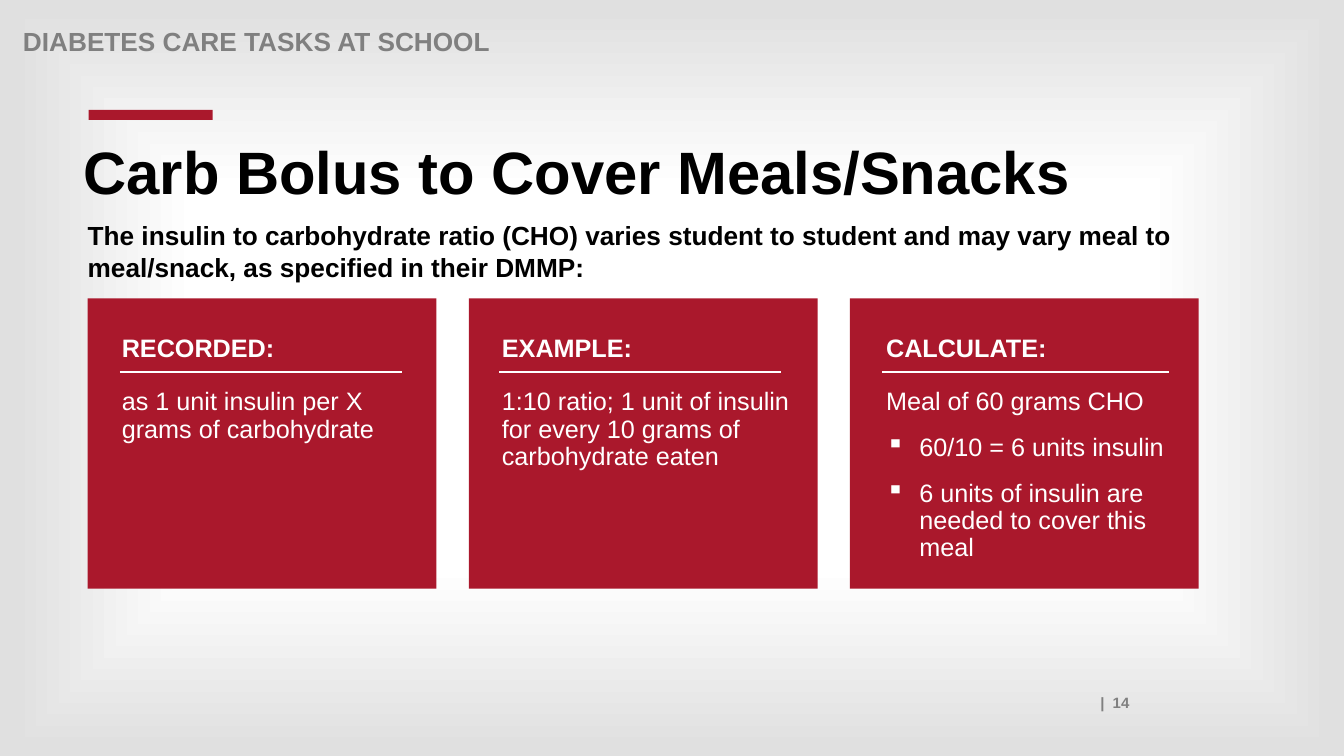
import pptx
import pptx.util
import pptx.dml.color
import pptx.enum.shapes
import pptx.enum.text
import pptx.oxml
import pptx.oxml.ns
import lxml.etree

inch = pptx.util.Inches
point = pptx.util.Pt
RED, WHITE, GREY, BLACK = "AA182C", "FFFFFF", "808080", "000000"


def paint(color, code):
    color.rgb = pptx.dml.color.RGBColor.from_string(code)


def write(box, lines, size, code, bold=False, tight=True, inset=True):
    """Add a text box; box is left, top, width, height in inches."""
    frame = slide.shapes.add_textbox(*map(inch, box)).text_frame
    frame.word_wrap = True
    if not inset:
        frame.margin_left = frame.margin_right = 0
        frame.margin_top = frame.margin_bottom = 0
    frame.text = "\n".join(lines)
    for para in frame.paragraphs:
        para.space_before = point(13.3)
        if tight:
            para.line_spacing = 0.9
        para.font.name = "Arial"
        para.font.size = point(size)
        para.font.bold = bold
        paint(para.font.color, code)
    return frame


deck = pptx.Presentation()
deck.slide_width, deck.slide_height = inch(13.33), inch(7.5)
slide = deck.slides.add_slide(deck.slide_layouts[6])

# Background: white centre fading to a grey edge
slide.background.fill.gradient()
grad = slide.element.find(".//" + pptx.oxml.ns.qn("a:gradFill"))
stops = "".join(
    f'<a:gs pos="{share * 1000}"><a:srgbClr val="{code}"/></a:gs>'
    for share, code in [(12, WHITE), (50, WHITE), (98, "E0E0E0")])
fade = pptx.oxml.parse_xml(
    f'<a:gradFill {pptx.oxml.ns.nsdecls("a")} rotWithShape="1"><a:gsLst>{stops}</a:gsLst>'
    '<a:path path="shape"><a:fillToRect l="50000" t="50000" r="50000" b="50000"/>'
    '</a:path></a:gradFill>')
grad.getparent().replace(grad, fade)

# Grid: three equal columns
left, pitch, wide = 0.87, 3.78, 3.46
top, tall = 2.96, 2.88
head, rule, body = 3.28, 3.69, 3.81

# Red bar and cards
bars = [(0.88, 1.09, 1.23, 0.1)]
bars += [(left + col * pitch, top, wide, tall) for col in range(3)]
for box in bars:
    rect = slide.shapes.add_shape(
        pptx.enum.shapes.MSO_SHAPE.RECTANGLE, *map(inch, box))
    rect.shadow.inherit = False
    rect.fill.solid()
    paint(rect.fill.fore_color, RED)
    rect.line.fill.background()

# Header, title, lead and page number
write((0.13, 0.24, 11, 0.28), ["DIABETES CARE TASKS AT SCHOOL"], 18.7, GREY, True)
write((0.73, 1.37, 11.03, 0.95), ["Carb Bolus to Cover Meals/Snacks"], 42.7, BLACK, True)
write((left, 2.18, 11.47, 0.63),
      ["The insulin to carbohydrate ratio (CHO) varies student to student "
       "and may vary meal to meal/snack, as specified in their DMMP:"],
      18.7, BLACK, True, tight=False, inset=False)
page = write((1.21, 6.83, 10.09, 0.28), ["|  14"], 10.7, GREY, True, tight=False)
page.paragraphs[0].alignment = pptx.enum.text.PP_ALIGN.RIGHT

# Card text: text left, rule start, rule end, heading, lines
cards = [
    (1.11, 1.19, 3.99, "RECORDED:",
     ["as 1 unit insulin per X grams of carbohydrate"]),
    (4.88, 4.95, 7.75, "EXAMPLE:",
     ["1:10 ratio; 1 unit of insulin for every 10 grams of carbohydrate eaten"]),
    (8.69, 8.75, 11.59, "CALCULATE:",
     ["Meal of 60 grams CHO", "60/10 = 6 units insulin",
      "6 units of insulin are needed to cover this meal"]),
]
for x, start, end, title, lines in cards:
    write((x, head, 2.66, 0.41), [title], 18, WHITE, True)
    text = write((x, body, 3.1 if len(lines) > 1 else 3.17, 0.92), lines, 18, WHITE)

    # Lines after the first are bullets
    for para in text.paragraphs[1:]:
        props = para._p.get_or_add_pPr()
        props.set("marL", str(inch(0.33)))
        props.set("indent", str(-inch(0.33)))
        mark = lxml.etree.SubElement(props, pptx.oxml.ns.qn("a:buChar"))
        mark.set("char", "▪")
        props.remove(mark)
        props.insert_element_before(mark, "a:tabLst", "a:defRPr", "a:extLst")

    line = slide.shapes.add_connector(
        pptx.enum.shapes.MSO_CONNECTOR.STRAIGHT,
        inch(start), inch(rule), inch(end), inch(rule))
    paint(line.line.color, WHITE)
    line.line.width = point(2)
    lxml.etree.SubElement(line._element.spPr, pptx.oxml.ns.qn("a:effectLst"))

deck.save("out.pptx")
